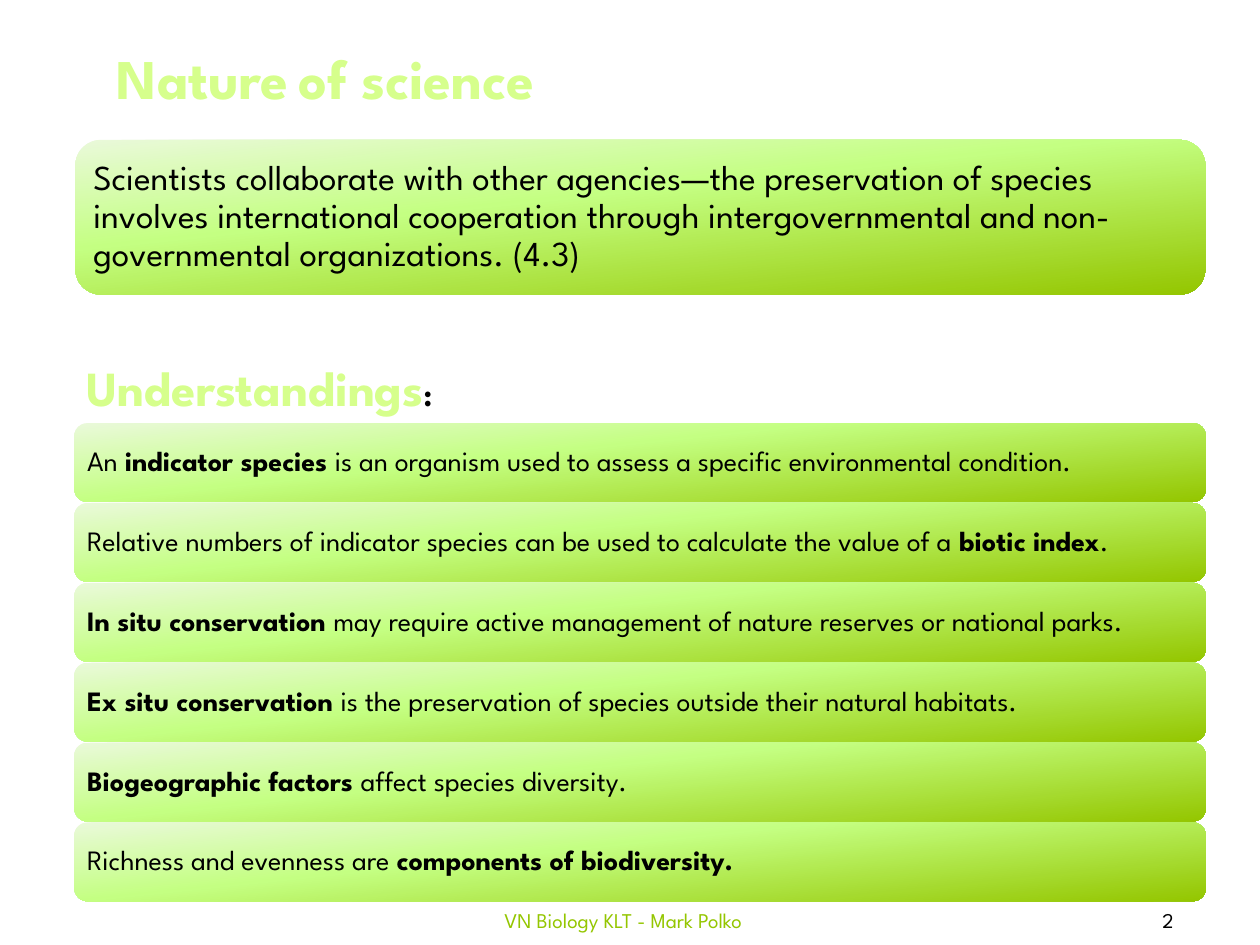
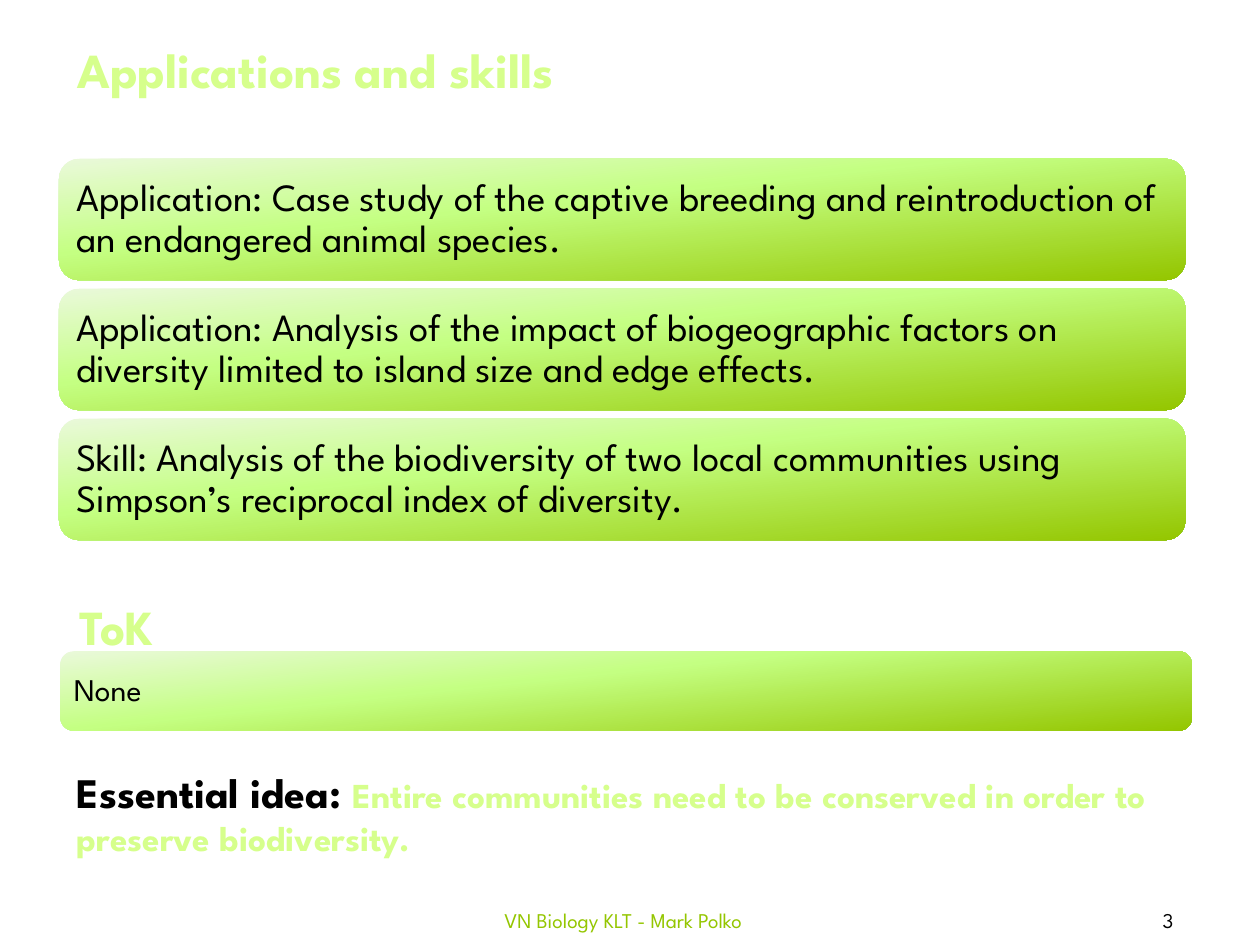
from lxml import etree
from pptx import Presentation
from pptx.dml.color import RGBColor
from pptx.enum.shapes import MSO_SHAPE as Shape
from pptx.enum.text import MSO_ANCHOR as Anchor, MSO_AUTO_SIZE as AutoSize, PP_ALIGN as Align
from pptx.oxml.ns import qn
from pptx.util import Cm, Pt

# Shared look
FONT = "League Spartan"
COLORS = {"text": "000000", "lime": "D6FF8C", "outline": "434128", "footer": "94C600"}
CARD_STOPS = [(0, "EAF9DA"), (40, "C4FF82"), (100, "94C600")]
CARD_ANGLE = 84  # clockwise
TITLE_ONLY = 5

# Run styles
PLAIN = {}
BOLD = {"bold": True}
COLON = {"bold": True, "size": 18}
SPACE = {"bold": True, "size": 20}
HEADING = {"bold": True, "color": "lime", "outline": True}
LEAD = {"bold": True, "size": 24, "outline": True}

# Content: boxes are (left, top, width, height) in cm; a card box is the first of its stack
FOOTER = ("VN Biology KLT - Mark Polko", (7.7, 18.03, 9.73, 1.02))
NUMBER_BOX = (21.69, 18.03, 3.71, 1.02)
SLIDES = [
    {
        "number": 2,
        "title": {
            "runs": [("Nature", HEADING), (" ", SPACE), ("of science", HEADING)],
            "box": (1.47, 0.74, 10.19, 1.63), "size": 32, "align": Align.CENTER,
        },
        "headings": [
            {"runs": [("Understandings", HEADING), (":", COLON)],
             "box": (1.5, 7.09, 8.13, 1.45), "size": 28},
        ],
        "stacks": [
            {"box": (1.5, 8.53, 22.81, 1.59), "gap": 0.02, "inset": 0.18, "size": 16, "cards": [
                [("An ", PLAIN), ("indicator species ", BOLD),
                 ("is an organism used to assess a specific environmental condition.", PLAIN)],
                [("Relative numbers of indicator species can be used to calculate the value of a ",
                  PLAIN), ("biotic index", BOLD), (".", PLAIN)],
                [("In situ conservation ", BOLD),
                 ("may require active management of nature reserves or national parks.", PLAIN)],
                [("Ex situ conservation ", BOLD),
                 ("is the preservation of species outside their natural habitats.", PLAIN)],
                [("Biogeographic factors ", BOLD), ("affect species diversity.", PLAIN)],
                [("Richness and evenness are ", PLAIN), ("components of biodiversity.", BOLD)],
            ]},
            {"box": (1.52, 2.82, 22.78, 3.12), "gap": 0, "inset": 0.21, "size": 20, "cards": [
                [("Scientists collaborate with other agencies—the preservation of species involves "
                  "international cooperation through intergovernmental and non-governmental "
                  "organizations. (4.3)", PLAIN)],
            ]},
        ],
    },
    {
        "number": 3,
        "title": {"runs": [("Applications and skills", HEADING)],
                  "box": (1.3, 0.66, 12.19, 1.45), "size": 28},
        "headings": [
            {"runs": [("Essential idea: ", LEAD),
                      ("Entire communities need to be conserved in order to preserve biodiversity.",
                       HEADING)],
             "box": (1.3, 15.32, 22.94, 2.13), "size": 20},
            {"runs": [("ToK", HEADING)], "box": (1.35, 11.91, 12.19, 1.45), "size": 28},
        ],
        "stacks": [
            {"box": (1.19, 3.2, 22.71, 2.45), "gap": 0.17, "inset": 0.23, "size": 22, "cards": [
                [("Application: Case study of the captive breeding and reintroduction of "
                  "an endangered animal species.", PLAIN)],
                [("Application: Analysis of the impact of biogeographic factors on diversity "
                  "limited to island size and edge effects.", PLAIN)],
                [("Skill: Analysis of the biodiversity of two local communities using "
                  "Simpson’s reciprocal index of diversity.", PLAIN)],
            ]},
            {"box": (1.22, 13.13, 22.81, 1.6), "gap": 0, "inset": 0.19, "size": 18, "cards": [
                [("None", PLAIN)],
            ]},
        ],
    },
]


def outline_text(run):
    """Give the letters a 1 pt outline."""
    line = etree.Element(qn("a:ln"), w=str(Pt(1)))
    fill = etree.SubElement(line, qn("a:solidFill"))
    etree.SubElement(fill, qn("a:srgbClr"), val=COLORS["outline"])
    run.font._element.insert(0, line)


def write(frame, runs, size, color="text", align=Align.LEFT, anchor=Anchor.TOP,
          inset=None, spacing=1.0):
    """Fill a text frame with one paragraph of styled runs."""
    frame.word_wrap = True
    frame.auto_size = AutoSize.NONE
    frame.vertical_anchor = anchor
    if inset is not None:
        frame.margin_left = frame.margin_right = Cm(inset)
        frame.margin_top = frame.margin_bottom = Cm(inset)
    paragraph = frame.paragraphs[0]
    paragraph.alignment = align
    paragraph.line_spacing = spacing
    for text, style in runs:
        run = paragraph.add_run()
        run.text = text
        run.font.name = FONT
        run.font.size = Pt(style.get("size", size))
        run.font.bold = style.get("bold", False)
        run.font.color.rgb = RGBColor.from_string(COLORS[style.get("color", color)])
        if style.get("outline"):
            outline_text(run)


def add_text(slide, box, runs, **text_format):
    write(slide.shapes.add_textbox(*map(Cm, box)).text_frame, runs, **text_format)


def set_title(slide, box, runs, **text_format):
    title = slide.shapes.title
    title.left, title.top, title.width, title.height = map(Cm, box)
    write(title.text_frame, runs, **text_format)


def shade(card):
    """Fill a card with the shared three-stop gradient."""
    card.fill.gradient()
    card.fill.gradient_angle = 360 - CARD_ANGLE
    stops = card._element.spPr.find(qn("a:gradFill")).find(qn("a:gsLst"))
    for stop in list(stops):
        stops.remove(stop)
    for percent, color in CARD_STOPS:
        stop = etree.SubElement(stops, qn("a:gs"), pos=str(percent * 1000))
        etree.SubElement(stop, qn("a:srgbClr"), val=color)


def add_stack(slide, box, gap, inset, size, cards):
    left, top, width, height = box
    for row, runs in enumerate(cards):
        card_top = top + row * (height + gap)
        card = slide.shapes.add_shape(
            Shape.ROUNDED_RECTANGLE, Cm(left), Cm(card_top), Cm(width), Cm(height))
        card.shadow.inherit = False
        card.line.fill.background()
        shade(card)
        write(card.text_frame, runs, size, anchor=Anchor.MIDDLE, inset=inset, spacing=0.9)


def add_footer(slide, number):
    text, box = FOOTER
    centred = {"size": 12, "align": Align.CENTER, "anchor": Anchor.MIDDLE}
    add_text(slide, NUMBER_BOX, [(str(number), PLAIN)], **centred)
    add_text(slide, box, [(text, PLAIN)], color="footer", **centred)


def main():
    deck = Presentation()
    deck.slide_width, deck.slide_height = Cm(25.4), Cm(19.05)
    for content in SLIDES:
        slide = deck.slides.add_slide(deck.slide_layouts[TITLE_ONLY])
        set_title(slide, **content["title"])
        add_footer(slide, content["number"])
        for heading in content["headings"]:
            add_text(slide, **heading)
        for stack in content["stacks"]:
            add_stack(slide, **stack)
    deck.save("out.pptx")


if __name__ == "__main__":
    main()
